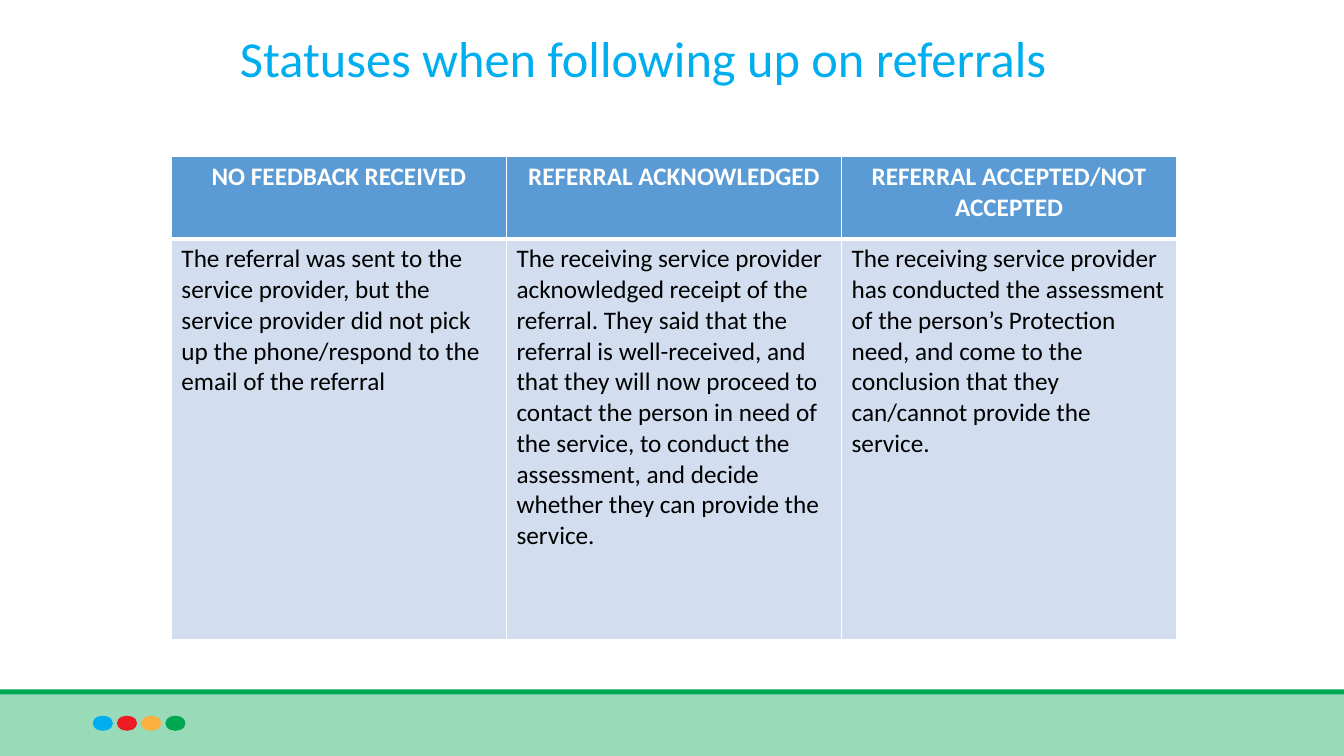
from lxml.etree import SubElement
from pptx import Presentation
from pptx.dml.color import RGBColor
from pptx.enum.shapes import MSO_SHAPE
from pptx.enum.text import MSO_ANCHOR, PP_ALIGN
from pptx.oxml.ns import qn
from pptx.util import Inches, Pt

# Content
TITLE = "Statuses when following up on referrals"
STATUSES = [
    ("NO FEEDBACK RECEIVED",
     "The referral was sent to the service provider, but the service provider "
     "did not pick up the phone/respond to the email of the referral"),
    ("REFERRAL ACKNOWLEDGED",
     "The receiving service provider acknowledged receipt of the referral. "
     "They said that the referral is well-received, and that they will now "
     "proceed to contact the person in need of the service, to conduct the "
     "assessment, and decide whether they can provide the service."),
    ("REFERRAL ACCEPTED/NOT ACCEPTED",
     "The receiving service provider has conducted the assessment of the "
     "person’s Protection need, and come to the conclusion that they "
     "can/cannot provide the service."),
]
DOT_COLORS = ["00AEEF", "ED1C24", "FBB040", "00A651"]

# Layout and formats
WIDTH, HEIGHT = 13.33, 7.5
BAND_TOP, STRIPE_TOP, STRIPE_HEIGHT = 6.87, 6.84, 0.05
DOT_LEFT, DOT_TOP, DOT_PITCH = 0.92, 7.1, 0.24
TABLE_LEFT, TABLE_TOP, TABLE_WIDTH = 1.7, 1.55, 9.97
ROW_HEIGHTS = [0.82, 3.98]
TITLE_FORMAT = {"size": Pt(36), "name": "Calibri"}
ROW_STYLES = [
    {"fill": "5B9BD5", "color": "FFFFFF", "align": PP_ALIGN.CENTER,
     "borders": {"L": 1, "R": 1, "T": 1, "B": 3},
     "font": {"size": Pt(18), "name": "Calibri", "bold": True}},
    {"fill": "D2DEEF", "color": "000000", "align": PP_ALIGN.LEFT,
     "borders": {"L": 1, "R": 1, "T": 3, "B": 1},
     "font": {"size": Pt(18), "name": "Calibri", "bold": False}},
]


def paint(target, color):
    target.solid()
    target.fore_color.rgb = RGBColor.from_string(color)


def write(frame, text, align, color, font_format):
    para = frame.paragraphs[0]
    para.alignment = align
    span = para.add_run()
    span.text = text
    for name, value in font_format.items():
        setattr(span.font, name, value)
    paint(span.font.fill, color)
    return para


def add_block(page, kind, color, *place):
    block = page.shapes.add_shape(kind, *map(Inches, place))
    block.shadow.inherit = False
    paint(block.fill, color)
    block.line.fill.background()


def add_borders(cell, borders):
    properties = cell._tc.get_or_add_tcPr()
    for index, (side, points) in enumerate(borders.items()):
        line = SubElement(properties, qn(f"a:ln{side}"), w=str(Pt(points)))
        SubElement(SubElement(line, qn("a:solidFill")), qn("a:srgbClr"), val="FFFFFF")
        properties.insert(index, line)  # borders come before the fill


def add_footer(page):
    add_block(page, MSO_SHAPE.RECTANGLE, "99DBB9",
              0, BAND_TOP, WIDTH, HEIGHT - BAND_TOP)
    add_block(page, MSO_SHAPE.RECTANGLE, "00A651",
              0, STRIPE_TOP, WIDTH, STRIPE_HEIGHT)
    for index, color in enumerate(DOT_COLORS):
        add_block(page, MSO_SHAPE.OVAL, color,
                  DOT_LEFT + index * DOT_PITCH, DOT_TOP, 0.2, 0.15)


def add_title(page):
    box = page.shapes.add_textbox(*map(Inches, (2.07, 0.13, 8.62, 0.96)))
    box.text_frame.word_wrap = True
    box.text_frame.vertical_anchor = MSO_ANCHOR.MIDDLE
    para = write(box.text_frame, TITLE, PP_ALIGN.CENTER, "00AEEF", TITLE_FORMAT)
    para.line_spacing = 0.9


def add_status_table(page):
    place = (TABLE_LEFT, TABLE_TOP, TABLE_WIDTH, sum(ROW_HEIGHTS))
    table = page.shapes.add_table(len(ROW_HEIGHTS), len(STATUSES),
                                  *map(Inches, place)).table
    for column in table.columns:
        column.width = Inches(TABLE_WIDTH / len(STATUSES))
    for row, (height, style) in enumerate(zip(ROW_HEIGHTS, ROW_STYLES)):
        table.rows[row].height = Inches(height)
        for column, status in enumerate(STATUSES):
            cell = table.cell(row, column)
            paint(cell.fill, style["fill"])
            add_borders(cell, style["borders"])
            write(cell.text_frame, status[row], style["align"],
                  style["color"], style["font"])


def main():
    deck = Presentation()
    deck.slide_width, deck.slide_height = Inches(WIDTH), Inches(HEIGHT)
    page = deck.slides.add_slide(deck.slide_layouts[6])
    add_footer(page)
    add_title(page)
    add_status_table(page)
    deck.save("out.pptx")


if __name__ == "__main__":
    main()
